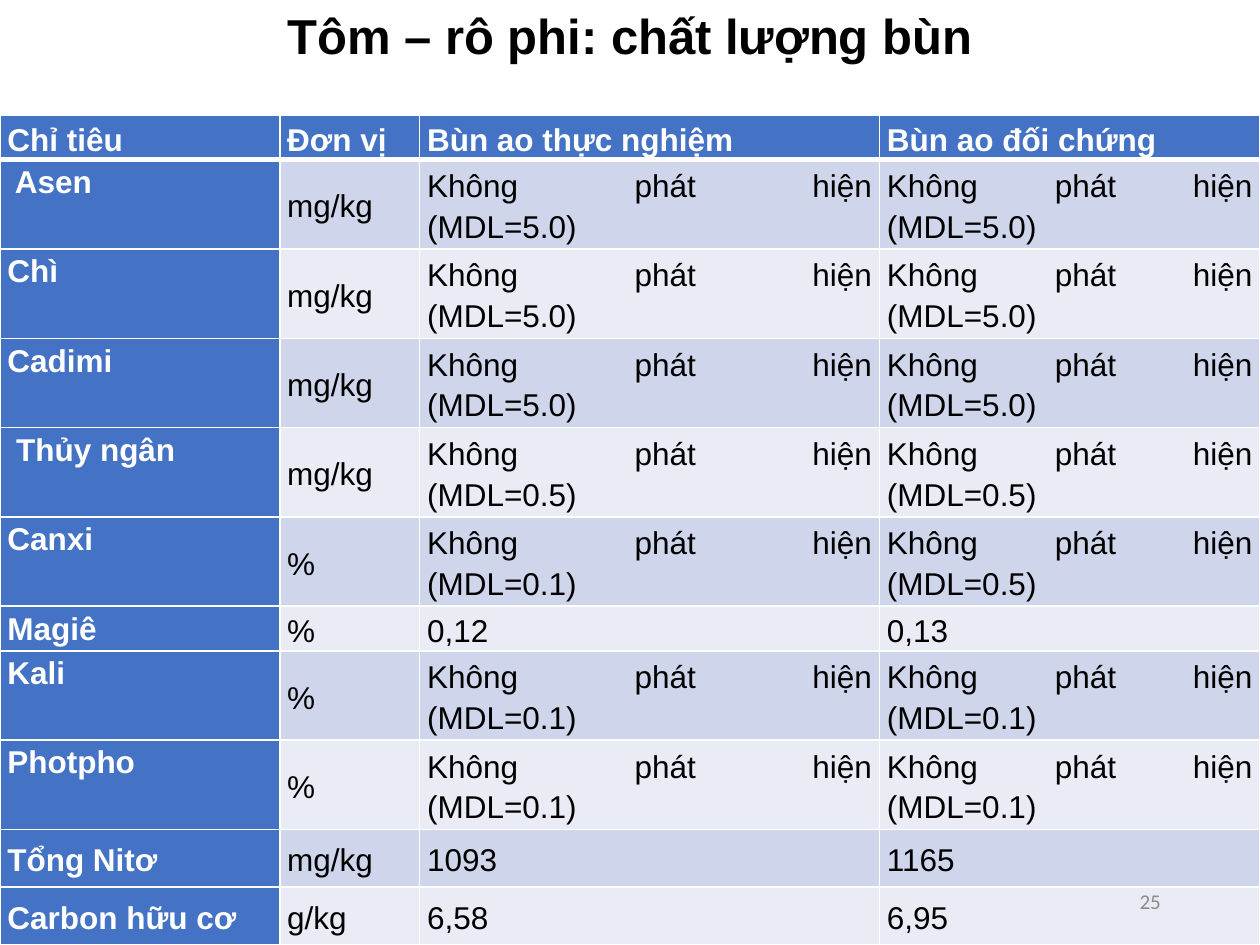
from dataclasses import dataclass

from lxml.etree import SubElement
from pptx import Presentation
from pptx.dml.color import RGBColor
from pptx.enum.text import MSO_ANCHOR, PP_ALIGN
from pptx.oxml.ns import qn
from pptx.util import Cm, Pt


@dataclass(frozen=True)
class Theme:
    font: str = "Arial"
    number_font: str = "Calibri"
    title_size: int = 28
    table_size: int = 18
    number_size: int = 12
    ink: str = "000000"
    white: str = "FFFFFF"
    accent: str = "4472C4"
    bands: tuple = ("CFD5EA", "E9EBF5")
    muted: str = "8C8C8C"


HEADINGS = ("Chỉ tiêu", "Đơn vị", "Bùn ao thực nghiệm", "Bùn ao đối chứng")
COLUMN_WIDTHS = (5.64, 2.82, 9.27, 7.67)
SINGLE, DOUBLE, LOOSE = 0.9, 1.8, 1.16  # row heights in cm


def undetected(limit):
    return f"Không phát hiện\n(MDL={limit})"


# Height, indicator, unit, experimental pond, control pond
MEASUREMENTS = (
    (DOUBLE, " Asen", "mg/kg", undetected("5.0"), undetected("5.0")),
    (DOUBLE, "Chì", "mg/kg", undetected("5.0"), undetected("5.0")),
    (DOUBLE, "Cadimi", "mg/kg", undetected("5.0"), undetected("5.0")),
    (DOUBLE, " Thủy ngân", "mg/kg", undetected("0.5"), undetected("0.5")),
    (DOUBLE, "Canxi", "%", undetected("0.1"), undetected("0.5")),
    (SINGLE, "Magiê", "%", "0,12", "0,13"),
    (DOUBLE, "Kali", "%", undetected("0.1"), undetected("0.1")),
    (DOUBLE, "Photpho", "%", undetected("0.1"), undetected("0.1")),
    (LOOSE, "Tổng Nitơ", "mg/kg", "1093", "1165"),
    (LOOSE, "Carbon hữu cơ ", "g/kg", "6,58", "6,95"),
)


def write(frame, text, *, font, size, color, bold=False,
          align=PP_ALIGN.LEFT, spacing=1.0):
    """Fill a text frame with one paragraph; a newline is a line break."""
    paragraph = frame.paragraphs[0]
    paragraph.text = text.replace("\n", "\v")
    paragraph.alignment = align
    paragraph.line_spacing = spacing
    for run in paragraph.runs:
        run.font.name = font
        run.font.size = Pt(size)
        run.font.bold = bold
        run.font.color.rgb = RGBColor.from_string(color)


def draw_borders(cell, color, **widths):
    """Set side borders from point widths keyed L, R, T and B."""
    properties = cell._tc.get_or_add_tcPr()
    for side, width in widths.items():
        line = SubElement(properties, qn(f"a:ln{side}"), w=str(Pt(width)))
        fill = SubElement(line, qn("a:solidFill"))
        SubElement(fill, qn("a:srgbClr"), val=color)


class SlideBuilder:
    def __init__(self, slide, theme):
        self.slide = slide
        self.theme = theme

    def title(self, text, left, top, width, height):
        heading = self.slide.shapes.title
        heading.left, heading.top = Cm(left), Cm(top)
        heading.width, heading.height = Cm(width), Cm(height)
        heading.text_frame.vertical_anchor = MSO_ANCHOR.MIDDLE
        write(heading.text_frame, text, font=self.theme.font,
              size=self.theme.title_size, color=self.theme.ink, bold=True,
              align=PP_ALIGN.CENTER, spacing=0.9)

    def cell(self, cell, text, *, fill, strong, anchor, bottom):
        theme = self.theme
        cell.margin_left = cell.margin_right = Cm(0.15)
        cell.margin_top = cell.margin_bottom = 0
        cell.vertical_anchor = anchor
        draw_borders(cell, theme.white, L=1, R=1, T=1, B=bottom)
        cell.fill.solid()
        cell.fill.fore_color.rgb = RGBColor.from_string(fill)
        write(cell.text_frame, text, font=theme.font, size=theme.table_size,
              color=theme.white if strong else theme.ink, bold=strong,
              align=PP_ALIGN.JUSTIFY, spacing=1.15)

    def table(self, headings, measurements, widths, left, top):
        rows = ((SINGLE, *headings), *measurements)
        table = self.slide.shapes.add_table(
            len(rows), len(widths), Cm(left), Cm(top),
            Cm(sum(widths)), Cm(sum(row[0] for row in rows))).table
        for column, width in zip(table.columns, widths):
            column.width = Cm(width)
        for r, (height, *texts) in enumerate(rows):
            table.rows[r].height = Cm(height)
            header = r == 0
            for c, text in enumerate(texts):
                strong = header or c == 0
                at_top = c == 0 and not header and height != LOOSE
                self.cell(
                    table.cell(r, c), text, strong=strong,
                    fill=self.theme.accent if strong
                    else self.theme.bands[(r - 1) % 2],
                    anchor=MSO_ANCHOR.TOP if at_top else MSO_ANCHOR.MIDDLE,
                    bottom=3 if header else 1)

    def page_number(self, number, left, top, width, height):
        box = self.slide.shapes.add_textbox(
            Cm(left), Cm(top), Cm(width), Cm(height))
        box.text_frame.word_wrap = True
        box.text_frame.vertical_anchor = MSO_ANCHOR.MIDDLE
        write(box.text_frame, str(number), font=self.theme.number_font,
              size=self.theme.number_size, color=self.theme.muted,
              align=PP_ALIGN.RIGHT)


def main():
    deck = Presentation()
    deck.slide_width, deck.slide_height = Cm(25.4), Cm(19.05)
    title_only = deck.slide_layouts[5]
    builder = SlideBuilder(deck.slides.add_slide(title_only), Theme())
    builder.title("Tôm – rô phi: chất lượng bùn", 1.75, 0, 21.9, 1.57)
    builder.table(HEADINGS, MEASUREMENTS, COLUMN_WIDTHS, left=0, top=2.32)
    builder.page_number(25, 17.93, 17.65, 5.72, 1.02)
    deck.save("out.pptx")


if __name__ == "__main__":
    main()
